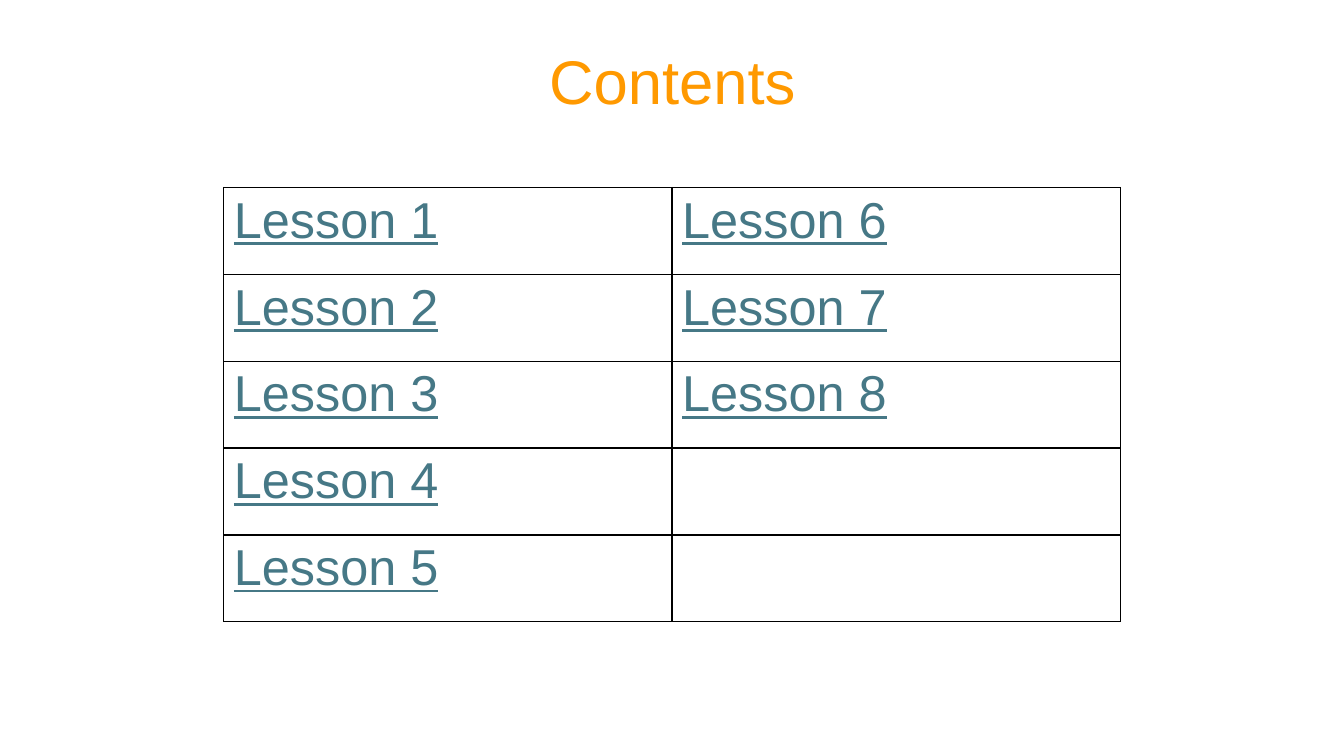
from dataclasses import dataclass

from lxml.etree import SubElement
from pptx import Presentation
from pptx.dml.color import RGBColor
from pptx.enum.text import MSO_ANCHOR, PP_ALIGN
from pptx.oxml.ns import qn
from pptx.util import Emu, Pt


@dataclass(frozen=True)
class Theme:
    font: str = "Arial"
    title: str = "FF9900"
    link: str = "467886"
    rule: str = "000000"
    title_size: int = 44
    cell_size: int = 36
    rule_width: int = 1


THEME = Theme()
ROWS, COLS, LESSONS = 5, 2, 8


def px(num):
    """Scale of 100 px to the inch."""
    return Emu(num * 9144)


def add_run(para, text, size, color, line=False):
    run = para.add_run()
    run.text = text
    font = run.font
    font.name, font.size, font.underline = THEME.font, Pt(size), line
    font.color.rgb = RGBColor.from_string(color)


def add_title(slide, text, left, top, width, height):
    title = slide.shapes.title
    title.left, title.top = px(left), px(top)
    title.width, title.height = px(width), px(height)
    frame = title.text_frame
    frame.vertical_anchor = MSO_ANCHOR.MIDDLE
    para = frame.paragraphs[0]
    para.alignment = PP_ALIGN.CENTER
    para.line_spacing = 0.9
    add_run(para, text, THEME.title_size, THEME.title)


def add_rules(cell):
    """Draw all four borders; they must come before the cell fill."""
    props = cell._tc.get_or_add_tcPr()
    for side in ("lnL", "lnR", "lnT", "lnB"):
        line = SubElement(props, qn(f"a:{side}"), w=str(Pt(THEME.rule_width)))
        fill = SubElement(line, qn("a:solidFill"))
        SubElement(fill, qn("a:srgbClr"), val=THEME.rule)


def add_grid(slide, left, top, width, height):
    frame = slide.shapes.add_table(
        ROWS, COLS, px(left), px(top), px(width), px(height))
    table = frame.table
    table.first_row = table.horz_banding = False
    # Lessons run down each column in turn
    for col in range(COLS):
        for row in range(ROWS):
            cell = table.cell(row, col)
            add_rules(cell)
            cell.fill.background()
            num = col * ROWS + row + 1
            if num <= LESSONS:
                add_run(cell.text_frame.paragraphs[0], f"Lesson {num}",
                        THEME.cell_size, THEME.link, line=True)


def main():
    deck = Presentation()
    deck.slide_width, deck.slide_height = px(1333), px(750)
    # Title-only layout
    slide = deck.slides.add_slide(deck.slide_layouts[5])
    add_title(slide, "Contents", 92, 11, 1150, 145)
    add_grid(slide, 222, 186, 889, 431)
    deck.save("out.pptx")


if __name__ == "__main__":
    main()
